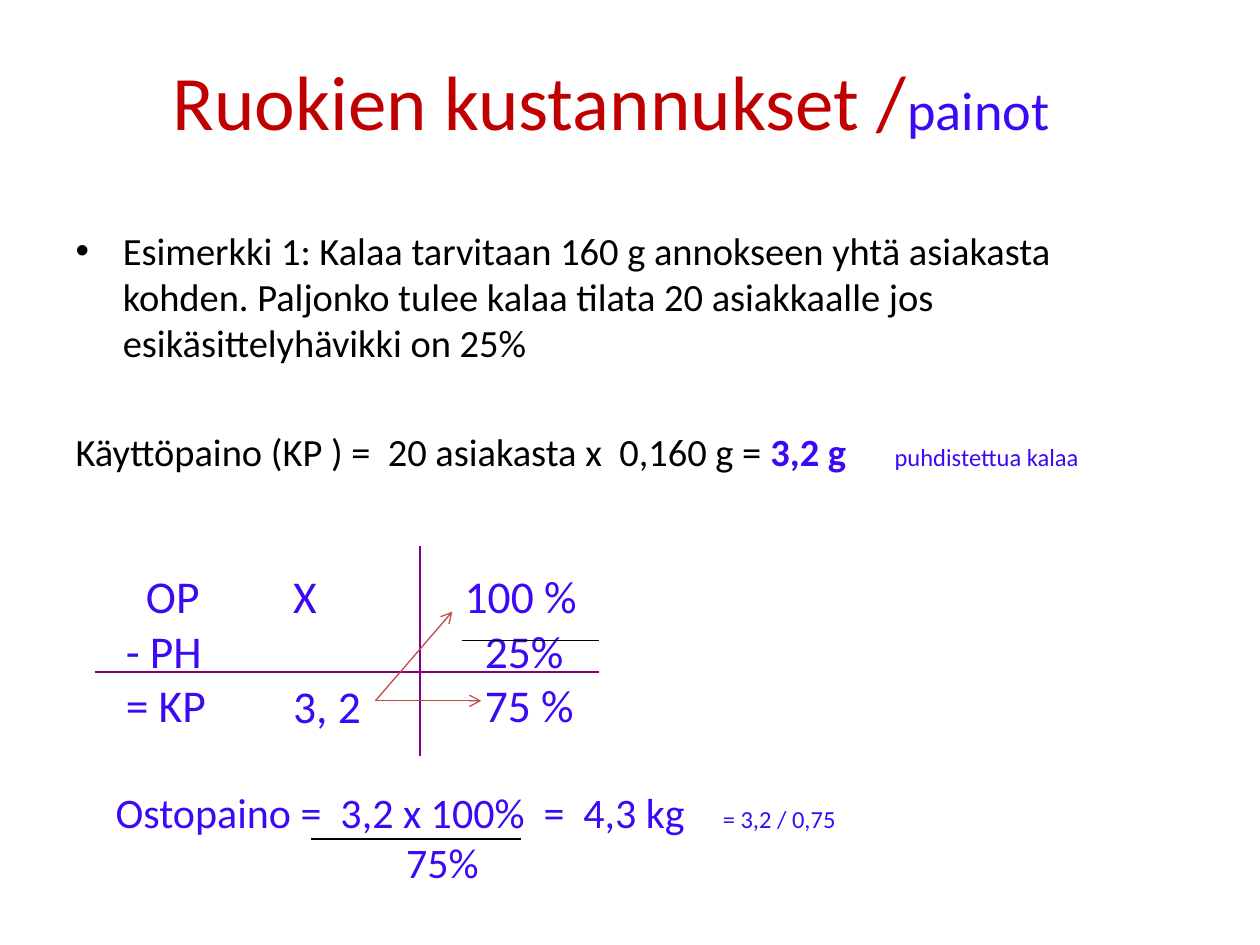
from pptx import Presentation
from pptx.dml.color import RGBColor
from pptx.enum import shapes, text
from pptx.oxml.ns import qn
from pptx.util import Pt
from lxml import etree

HUES = {"red": "C00000", "blue": "3C09F5", "black": "000000",
        "plum": "800080", "rust": "BF4C48"}
FONT = "Calibri"


def sub(parent, tag, **attrs):
    return etree.SubElement(parent, qn(tag), attrs)


def write(para, txt, size, hue, bold=None):
    run = para.add_run()
    run.text = txt
    font = run.font
    font.name, font.size, font.bold = FONT, Pt(size), bold
    font.color.rgb = RGBColor.from_string(HUES[hue])


def tab(para, pos):
    stops = sub(para._p.get_or_add_pPr(), "a:tabLst")
    sub(stops, "a:tab", pos=str(Pt(pos)), algn="l")


def indent(para, left):
    para._p.get_or_add_pPr().set("marL", str(Pt(left)))


def place(shape, box):
    shape.left, shape.top, shape.width, shape.height = map(Pt, box)


def line(slide, x1, y1, x2, y2, hue, width=1, arrow=False):
    rule = slide.shapes.add_connector(
        shapes.MSO_CONNECTOR.STRAIGHT, Pt(x1), Pt(y1), Pt(x2), Pt(y2))
    rule.line.color.rgb = RGBColor.from_string(HUES[hue])
    rule.line.width = Pt(width)
    props = rule._element.spPr
    if arrow:
        sub(props.find(qn("a:ln")), "a:tailEnd", type="arrow")
    sub(props, "a:effectLst")


def label(slide, box):
    shape = slide.shapes.add_textbox(*map(Pt, box))
    frame = shape.text_frame
    frame.word_wrap = False
    frame.auto_size = text.MSO_AUTO_SIZE.SHAPE_TO_FIT_TEXT
    return frame


def heading(slide, box):
    title = slide.shapes.title
    place(title, box)
    para = title.text_frame.paragraphs[0]
    para.alignment = text.PP_ALIGN.CENTER
    write(para, "Ruokien kustannukset /", 44, "red")
    write(para, "painot", 31, "blue")


def task(slide, box):
    body = slide.placeholders[1]
    place(body, box)
    frame = body.text_frame
    write(frame.paragraphs[0],
          "Esimerkki 1: Kalaa tarvitaan 160 g annokseen yhtä asiakasta "
          "kohden. Paljonko tulee kalaa tilata 20 asiakkaalle jos "
          "esikäsittelyhävikki on 25%", 22, "black")
    # Net weight, set apart without a bullet
    para = frame.add_paragraph()
    para.space_before = Pt(35.6)
    props = para._p.get_or_add_pPr()
    props.set("marL", "0")
    props.set("indent", "0")
    sub(props, "a:buNone")
    tab(para, 460)
    write(para, "Käyttöpaino (KP ) =  20 asiakasta x  0,160 g = ", 22, "black")
    write(para, "3,2 g\t", 22, "blue", True)
    write(para, "puhdistettua kalaa", 14, "blue", False)


def cross(slide, box):
    left, top, width, height = box
    mid, base = left + 186, top + 72
    line(slide, left, base, left + width, base, "plum")
    line(slide, mid, top, mid, top + height, "plum")
    # Columns: offset, width, rows of (text, indent, space before)
    cols = [(10.8, 60.5, [("OP", 11.5, 0), ("- PH", 0, 0), ("= KP", 0, 0)]),
            (106.5, 53.3, [("X", 0, 0), ("3, 2", 0, 31.7)]),
            (204.5, 79.2, [("100 %", 0, 0), ("25%", 11.5, 0),
                           ("75 %", 11.5, 0)])]
    for dx, wide, rows in cols:
        frame = label(slide, (left + dx, top + 9.1, wide, 101.5))
        for i, (txt, inset, gap) in enumerate(rows):
            para = frame.add_paragraph() if i else frame.paragraphs[0]
            para.space_before = Pt(gap)
            indent(para, inset)
            write(para, txt, 26, "blue")
    # Subtraction rule and arrows
    line(slide, left + 210, top + 54, left + width, top + 54, "black")
    x, y = left + 160.5, top + 88.5
    for dx, dy in [(44, -51), (60.5, 0)]:
        line(slide, x, y, x + dx, y + dy, "rust", 0.75, True)


def answer(slide, box):
    left, top = box[:2]
    frame = label(slide, box)
    para = frame.paragraphs[0]
    tab(para, 347)
    write(para, "Ostopaino =  3,2 x 100%  =  4,3 kg\t", 24, "blue")
    write(para, "= 3,2 / 0,75", 14, "blue")
    para = frame.add_paragraph()
    indent(para, 166)
    write(para, "75%", 24, "blue")
    # Fraction bar
    line(slide, left + 119, top + 33.8, left + 238.5, top + 33.8, "black")


def main():
    deck = Presentation()
    deck.slide_width, deck.slide_height = Pt(720), Pt(540)
    slide = deck.slides.add_slide(deck.slide_layouts[1])
    heading(slide, (25.2, 12.2, 648, 90))
    task(slide, (36, 126, 648, 356.4))
    cross(slide, (54, 312, 288, 120))
    answer(slide, (59, 445.7, 429, 65.5))
    deck.save("out.pptx")


if __name__ == "__main__":
    main()
